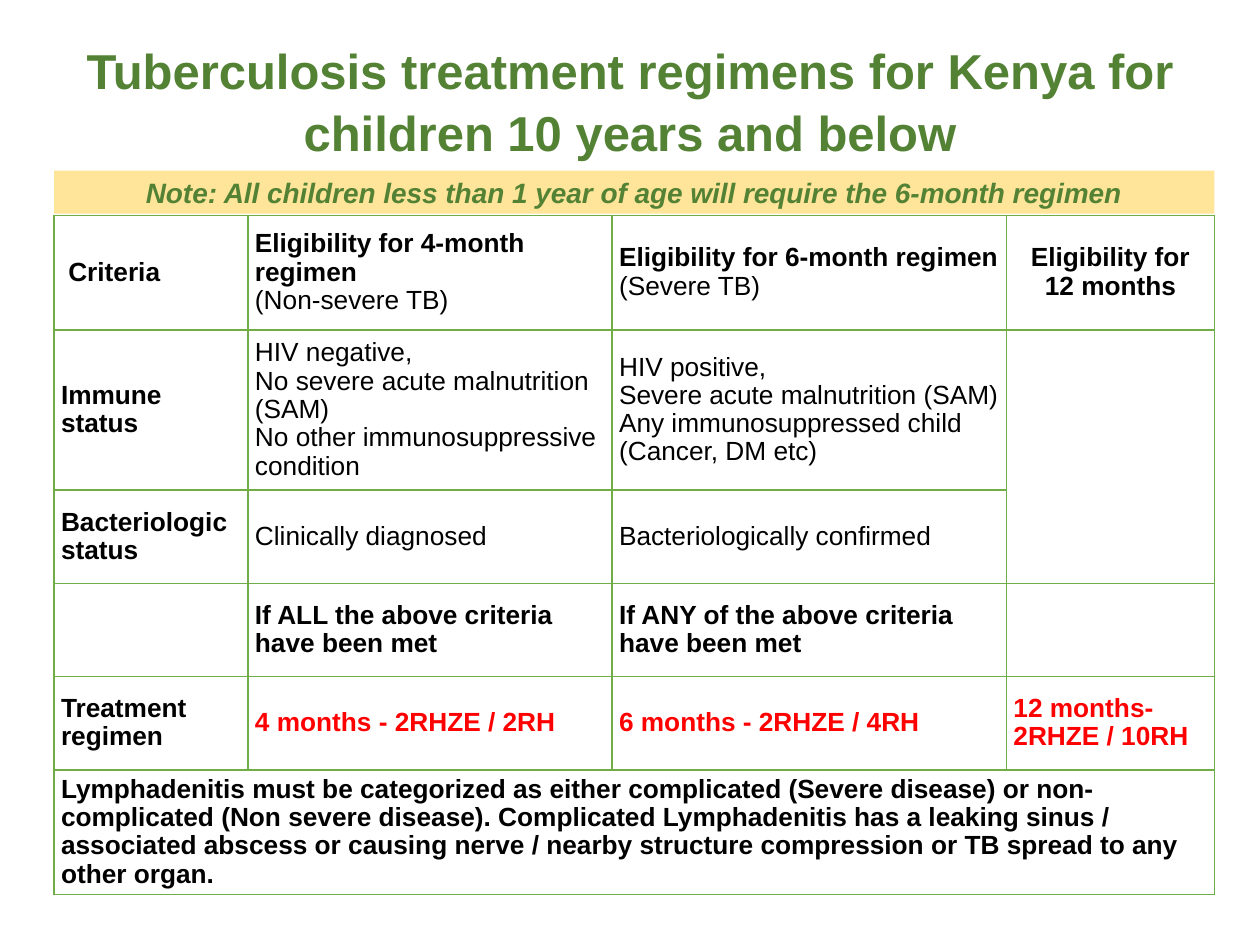
from dataclasses import dataclass

import pptx
import pptx.dml.color
import pptx.enum.shapes
import pptx.enum.text
import pptx.oxml.ns
import pptx.util
from lxml import etree

Cm = pptx.util.Cm
Pt = pptx.util.Pt
RGBColor = pptx.dml.color.RGBColor
Align = pptx.enum.text.PP_ALIGN
Anchor = pptx.enum.text.MSO_ANCHOR
qn = pptx.oxml.ns.qn

DARK_GREEN = RGBColor(0x54, 0x82, 0x35)
BORDER_GREEN = RGBColor(0x70, 0xAD, 0x47)
SAND = RGBColor(0xFE, 0xE5, 0x99)
BLACK = RGBColor(0, 0, 0)
RED = RGBColor(0xFF, 0, 0)

LEFT = Cm(1.09)
COLUMN_WIDTHS = [Cm(w) for w in (3.91, 7.34, 7.95, 4.19)]
ROW_HEIGHTS = [Cm(h) for h in (2.31, 3.23, 1.88, 1.88, 1.88, 2.51)]


@dataclass(frozen=True)
class Entry:
    bold: tuple[str, ...] = ()
    plain: tuple[str, ...] = ()
    color: RGBColor = BLACK
    align: Align = Align.LEFT


def label(text: str, color: RGBColor = BLACK, align: Align = Align.LEFT) -> Entry:
    return Entry(bold=(text,), color=color, align=align)


REGIMENS = [
    [
        label("\N{NO-BREAK SPACE}Criteria".replace("\N{NO-BREAK SPACE}", " ")),
        Entry(("Eligibility for 4-month regimen",), ("(Non-severe TB)",)),
        Entry(("Eligibility for 6-month regimen",), ("(Severe TB)",)),
        label("Eligibility for 12 months", align=Align.CENTER),
    ],
    [
        label("Immune status"),
        Entry(plain=(
            "HIV negative,",
            "No severe acute malnutrition (SAM)",
            "No other immunosuppressive condition",
        )),
        Entry(plain=(
            "HIV positive,",
            "Severe acute malnutrition (SAM)",
            "Any immunosuppressed child (Cancer, DM etc)",
        )),
        Entry(),
    ],
    [
        label("Bacteriologic status"),
        Entry(plain=("Clinically diagnosed",)),
        Entry(plain=("Bacteriologically confirmed",)),
        Entry(),
    ],
    [
        Entry(),
        label("If ALL the above criteria have been met"),
        label("If ANY of the above criteria have been met"),
        Entry(),
    ],
    [
        label("Treatment regimen"),
        label("4 months - 2RHZE / 2RH", RED),
        label("6 months - 2RHZE / 4RH", RED),
        label("12 months- 2RHZE / 10RH", RED),
    ],
    [
        label(
            "Lymphadenitis must be categorized as either complicated (Severe disease) "
            "or non-complicated (Non severe disease). Complicated Lymphadenitis has a "
            "leaking sinus / associated abscess or causing nerve / nearby structure "
            "compression or TB spread to any other organ."
        ),
        Entry(), Entry(), Entry(),
    ],
]


def style(paragraph, size: float, color: RGBColor, bold: bool, align: Align) -> None:
    paragraph.alignment = align
    font = paragraph.font
    font.name = "Arial"
    font.size = Pt(size)
    font.bold = bold
    font.color.rgb = color


def add_borders(cell) -> None:
    properties = cell._tc.get_or_add_tcPr()
    for side in ("a:lnL", "a:lnR", "a:lnT", "a:lnB"):
        line = etree.SubElement(properties, qn(side), w=str(Pt(1)))
        fill = etree.SubElement(line, qn("a:solidFill"))
        etree.SubElement(fill, qn("a:srgbClr"), val=str(BORDER_GREEN))


def fill_cell(cell, entry: Entry) -> None:
    cell.vertical_anchor = Anchor.MIDDLE
    cell.margin_left = cell.margin_right = Cm(0.14)
    cell.margin_top = cell.margin_bottom = 0
    add_borders(cell)
    cell.fill.background()
    lines = entry.bold + entry.plain
    cell.text = "\n".join(lines)
    for index, paragraph in enumerate(cell.text_frame.paragraphs):
        style(paragraph, 15, entry.color, index < len(entry.bold), entry.align)
        paragraph.line_spacing = 0.97


def add_note(slide) -> None:
    note = slide.shapes.add_shape(
        pptx.enum.shapes.MSO_SHAPE.RECTANGLE, LEFT, Cm(3.44), sum(COLUMN_WIDTHS), Cm(0.87)
    )
    note.shadow.inherit = False
    note.fill.solid()
    note.fill.fore_color.rgb = SAND
    note.line.fill.background()
    frame = note.text_frame
    frame.word_wrap = True
    frame.vertical_anchor = Anchor.TOP
    frame.margin_left = frame.margin_right = Cm(0.18)
    frame.margin_top = frame.margin_bottom = Cm(0.1)
    frame.text = "Note: All children less than 1 year of age will require the 6-month regimen"
    style(frame.paragraphs[0], 16, DARK_GREEN, True, Align.CENTER)
    frame.paragraphs[0].font.italic = True


def add_regimen_table(slide) -> None:
    table = slide.shapes.add_table(
        len(ROW_HEIGHTS), len(COLUMN_WIDTHS), LEFT, Cm(4.34),
        sum(COLUMN_WIDTHS), sum(ROW_HEIGHTS),
    ).table
    table.first_row = table.horz_banding = False
    for column, width in zip(table.columns, COLUMN_WIDTHS):
        column.width = width
    for row, height, entries in zip(table.rows, ROW_HEIGHTS, REGIMENS):
        row.height = height
        for cell, entry in zip(row.cells, entries):
            fill_cell(cell, entry)
    table.cell(1, 3).merge(table.cell(2, 3))
    table.cell(5, 0).merge(table.cell(5, 3))


def add_title(slide) -> None:
    frame = slide.shapes.add_textbox(LEFT, Cm(0.64), Cm(23.22), Cm(2.64)).text_frame
    frame.word_wrap = True
    frame.text = "Tuberculosis treatment regimens for Kenya for children 10 years and below"
    style(frame.paragraphs[0], 28, DARK_GREEN, True, Align.CENTER)
    frame.paragraphs[0].line_spacing = 1.05


def main() -> None:
    presentation = pptx.Presentation()
    presentation.slide_width = Cm(25.4)
    presentation.slide_height = Cm(19.05)
    slide = presentation.slides.add_slide(presentation.slide_layouts[6])
    add_note(slide)
    add_regimen_table(slide)
    add_title(slide)
    presentation.save("out.pptx")


if __name__ == "__main__":
    main()
